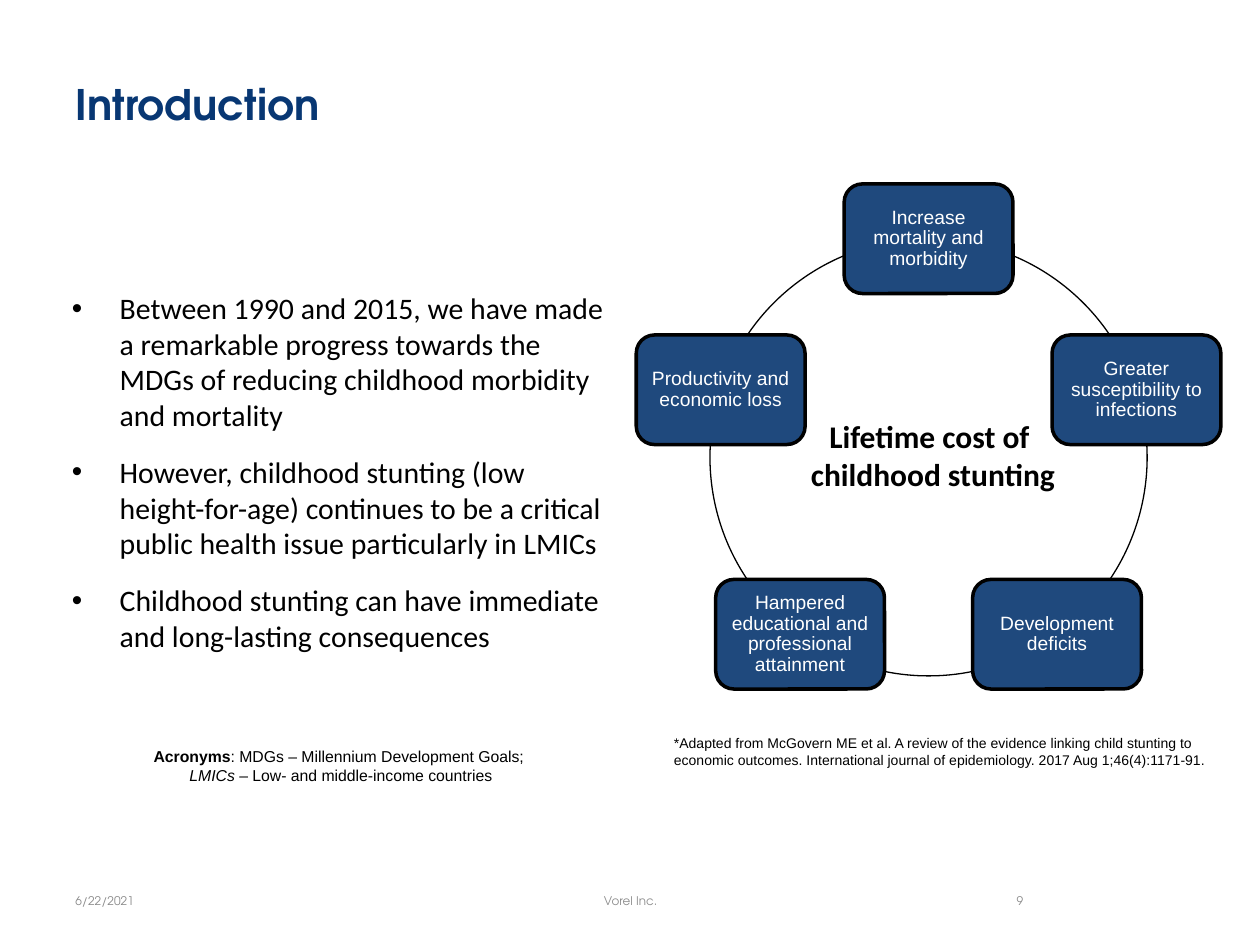
from dataclasses import dataclass
from math import cos, radians, sin

from lxml.etree import SubElement
from pptx import Presentation
from pptx.dml.color import RGBColor
from pptx.enum.shapes import MSO_SHAPE as Shape
from pptx.enum.text import MSO_ANCHOR as Anchor, MSO_AUTO_SIZE as AutoSize, PP_ALIGN as Align
from pptx.oxml.ns import qn
from pptx.util import Inches, Pt

COLORS = {
    "title": "083773",
    "card": "1F497D",
    "black": "000000",
    "white": "FFFFFF",
    "date": "898989",
    "footer": "8C8C8C",
}
HEADING_FONT = "TeX Gyre Adventor"
CENTER_X, CENTER_Y, RADIUS = 7.37, 3.63, 1.735
CARD_WIDTH, CARD_HEIGHT = 1.34, 0.87


@dataclass
class Span:
    text: str
    bold: bool = False
    italic: bool = False


@dataclass
class TextBlock:
    at: tuple[float, float, float, float]
    lines: list[list[Span]]
    size: float
    font: str = "Arial"
    color: str = "black"
    align: Align = Align.LEFT
    anchor: Anchor = Anchor.TOP
    wrap: bool = True


@dataclass
class Cost:
    text: str
    arc_start: float
    arc_end: float


COSTS = [
    Cost("Increase mortality and morbidity", 293, 326),
    Cost("Greater susceptibility to infections", 357, 34),
    Cost("Development deficits", 78.5, 101.5),
    Cost("Hampered educational and professional attainment", 146, 183),
    Cost("Productivity and economic loss", 214, 247),
]

POINTS = [
    "Between 1990 and 2015, we have made a remarkable progress towards the MDGs "
    "of reducing childhood morbidity and mortality",
    "However, childhood stunting (low height-for-age) continues to be a critical "
    "public health issue particularly in LMICs",
    "Childhood stunting can have immediate and long-lasting consequences",
]

FOOTER = [
    TextBlock((0.5, 6.95, 2.33, 0.4), [[Span("6/22/2021")]], 6.8, HEADING_FONT,
              "date", Align.LEFT, Anchor.MIDDLE),
    TextBlock((3.42, 6.95, 3.17, 0.4), [[Span("Vorel Inc.")]], 6.8, HEADING_FONT,
              "footer", Align.CENTER, Anchor.MIDDLE),
    TextBlock((7.17, 6.95, 1.05, 0.4), [[Span("9")]], 6.8, HEADING_FONT,
              "date", Align.RIGHT, Anchor.MIDDLE),
]

ACRONYMS = TextBlock(
    (0.5, 5.88, 4.41, 0.4),
    [[Span("Acronyms", bold=True), Span(": MDGs – Millennium Development Goals; ")],
     [Span("LMICs", italic=True), Span(" – Low- and middle-income countries")]],
    9, align=Align.CENTER)

RING_LABEL = TextBlock(
    (6.33, 3.26, 2.15, 0.71),
    [[Span("Lifetime cost of ", bold=True)], [Span("childhood stunting", bold=True)]],
    18, "Calibri", align=Align.CENTER, wrap=False)

CITATION = TextBlock(
    (5.25, 5.78, 4.67, 0.37),
    [[Span("*Adapted from McGovern ME et al. A review of the evidence linking child "
           "stunting to economic outcomes. International journal of epidemiology. "
           "2017 Aug 1;46(4):1171-91.")]],
    8)


def rgb(name: str) -> RGBColor:
    return RGBColor.from_string(COLORS[name])


def style(para, size: float, font: str, color: str) -> None:
    para.font.size = Pt(size)
    para.font.name = font
    para.font.color.rgb = rgb(color)


def place(shape, at: tuple[float, float, float, float]) -> None:
    shape.left, shape.top, shape.width, shape.height = map(Inches, at)


def add_text(page, block: TextBlock) -> None:
    frame = page.shapes.add_textbox(*map(Inches, block.at)).text_frame
    frame.word_wrap = block.wrap
    frame.vertical_anchor = block.anchor
    for index, line in enumerate(block.lines):
        para = frame.add_paragraph() if index else frame.paragraphs[0]
        para.alignment = block.align
        style(para, block.size, block.font, block.color)
        for span in line:
            run = para.add_run()
            run.text = span.text
            run.font.bold = span.bold
            run.font.italic = span.italic


def add_title(page) -> None:
    title = page.shapes.title
    place(title, (0.5, 0.3, 9, 1.04))
    title.text_frame.text = "Introduction"
    title.text_frame.auto_size = AutoSize.NONE
    title.text_frame.vertical_anchor = Anchor.MIDDLE
    para = title.text_frame.paragraphs[0]
    para.alignment = Align.LEFT
    style(para, 24, HEADING_FONT, "title")
    para.font.bold = True


def add_points(page) -> None:
    body = page.placeholders[1]
    place(body, (0.47, 2.25, 4.52, 3.59))
    frame = body.text_frame
    frame.auto_size = AutoSize.NONE
    for index, text in enumerate(POINTS):
        para = frame.add_paragraph() if index else frame.paragraphs[0]
        para.text = text
        para.space_before = Pt(6 if index else 0)
        para.space_after = Pt(6)
        properties = para._p.get_or_add_pPr()
        properties.set("marL", str(Inches(0.38)))
        properties.set("indent", str(Inches(-0.38)))
        SubElement(properties, qn("a:buFont")).set("typeface", "Arial")
        SubElement(properties, qn("a:buChar")).set("char", "•")
        style(para, 17, "Calibri", "black")


def add_arc(page, cost: Cost) -> None:
    arc = page.shapes.add_shape(
        Shape.ARC, Inches(CENTER_X - RADIUS), Inches(CENTER_Y - RADIUS),
        Inches(2 * RADIUS), Inches(2 * RADIUS))
    arc.shadow.inherit = False
    arc.adjustments[0] = cost.arc_start * 0.6
    arc.adjustments[1] = cost.arc_end * 0.6
    arc.fill.background()
    arc.line.color.rgb = rgb("black")
    arc.line.width = Pt(0.75)


def add_card(page, cost: Cost, angle: float) -> None:
    left = CENTER_X + RADIUS * cos(radians(angle)) - CARD_WIDTH / 2
    top = CENTER_Y + RADIUS * sin(radians(angle)) - CARD_HEIGHT / 2
    card = page.shapes.add_shape(
        Shape.ROUNDED_RECTANGLE, Inches(left), Inches(top),
        Inches(CARD_WIDTH), Inches(CARD_HEIGHT))
    card.shadow.inherit = False
    card.fill.solid()
    card.fill.fore_color.rgb = rgb("card")
    card.line.color.rgb = rgb("black")
    card.line.width = Pt(2)
    frame = card.text_frame
    frame.word_wrap = True
    frame.vertical_anchor = Anchor.MIDDLE
    frame.margin_left = frame.margin_right = Inches(0.05)
    frame.margin_top = frame.margin_bottom = Inches(0.05)
    frame.text = cost.text
    para = frame.paragraphs[0]
    para.alignment = Align.CENTER
    para.line_spacing = 0.9
    style(para, 11, "Arial", "white")


def main() -> None:
    deck = Presentation()
    deck.slide_width, deck.slide_height = Inches(10), Inches(7.5)
    page = deck.slides.add_slide(deck.slide_layouts[1])
    add_title(page)
    add_points(page)
    for index, cost in enumerate(COSTS):
        add_card(page, cost, -90 + index * 360 / len(COSTS))
        add_arc(page, cost)
    for block in [*FOOTER, ACRONYMS, RING_LABEL, CITATION]:
        add_text(page, block)
    deck.save("out.pptx")


if __name__ == "__main__":
    main()
